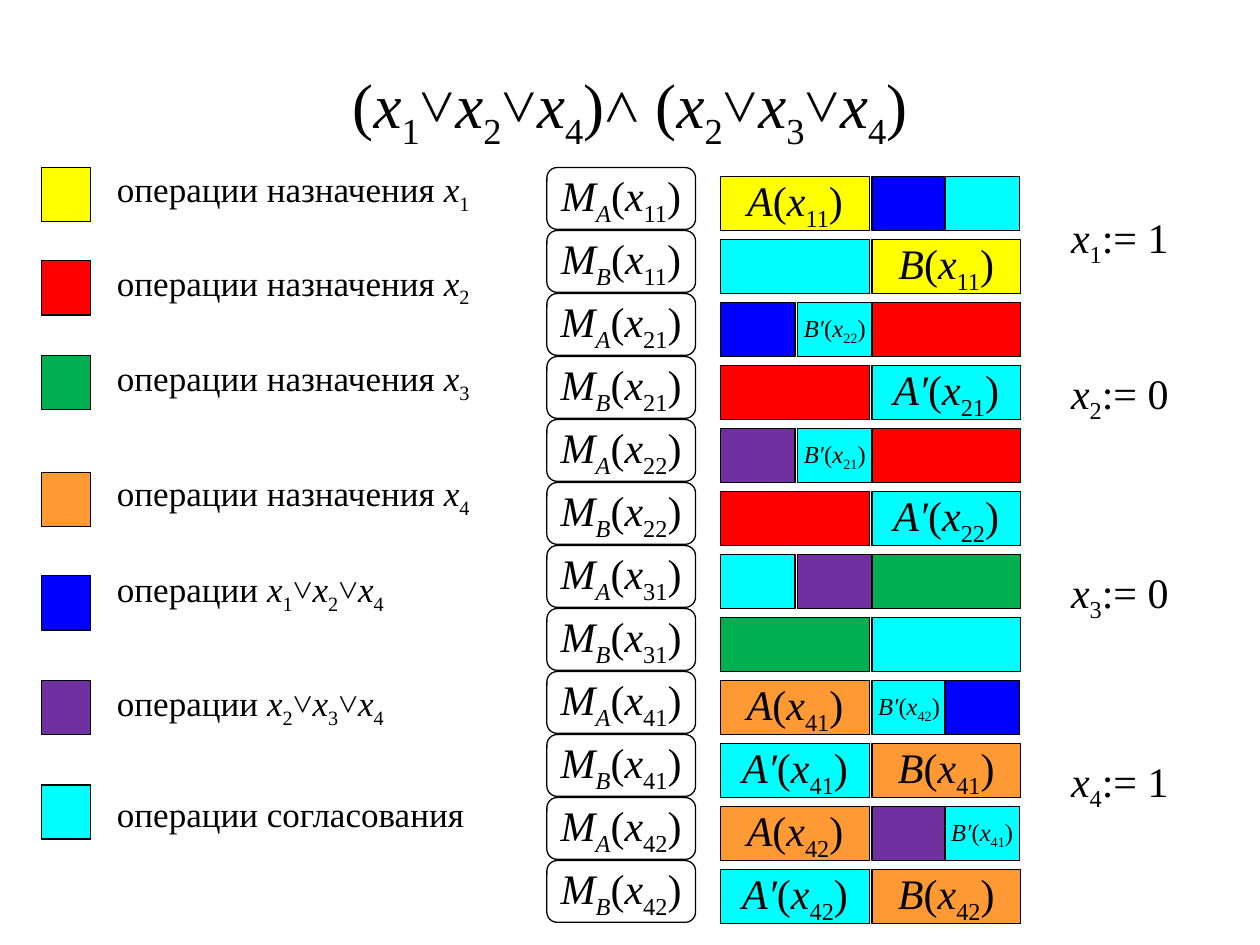
from itertools import groupby

from pptx import Presentation
from pptx.dml.color import RGBColor
from pptx.enum.shapes import MSO_SHAPE
from pptx.enum.text import MSO_ANCHOR, PP_ALIGN
from pptx.util import Inches, Pt

RECT, ROUNDED = MSO_SHAPE.RECTANGLE, MSO_SHAPE.ROUNDED_RECTANGLE
MIDDLE, BOTTOM = MSO_ANCHOR.MIDDLE, MSO_ANCHOR.BOTTOM
CENTER, LEFT = PP_ALIGN.CENTER, PP_ALIGN.LEFT

FONT = "Times New Roman"
COLORS = {
    "black": "000000", "yellow": "FFFF00", "red": "FF0000", "green": "00B050",
    "orange": "FF9933", "blue": "0000FF", "purple": "7030A0", "cyan": "00FFFF",
}

# In formulas "_" starts a subscript, which lasts to the next sign or space.
TITLE = "(x_1˅x_2˅x_4)˄ (x_2˅x_3˅x_4)"

# colour, label, swatch top, label top, label height
LEGEND = [
    ("yellow", "операции назначения x_1", 1.33, 1.25, 0.51),
    ("red", "операции назначения x_2", 2.07, 1.99, 0.51),
    ("green", "операции назначения x_3", 2.82, 2.75, 0.51),
    ("orange", "операции назначения x_4", 3.75, 3.66, 0.51),
    ("blue", "операции x_1˅x_2˅x_4", 4.57, 4.49, 0.44),
    ("purple", "операции x_2˅x_3˅x_4", 5.4, 5.4, 0.44),
    ("cyan", "операции согласования", 6.23, 6.16, 0.51),
]

# machine, then its operations: colour, length in half slots, label
SCHEDULE = [
    ("M_A(x_11)", [("yellow", 2, "A(x_11)"), ("blue", 1, ""), ("cyan", 1, "")]),
    ("M_B(x_11)", [("cyan", 2, ""), ("yellow", 2, "B(x_11)")]),
    ("M_A(x_21)", [("blue", 1, ""), ("cyan", 1, "B′(x_22)"), ("red", 2, "")]),
    ("M_B(x_21)", [("red", 2, ""), ("cyan", 2, "A′(x_21)")]),
    ("M_A(x_22)", [("purple", 1, ""), ("cyan", 1, "B′(x_21)"), ("red", 2, "")]),
    ("M_B(x_22)", [("red", 2, ""), ("cyan", 2, "A′(x_22)")]),
    ("M_A(x_31)", [("cyan", 1, ""), ("purple", 1, ""), ("green", 2, "")]),
    ("M_B(x_31)", [("green", 2, ""), ("cyan", 2, "")]),
    ("M_A(x_41)", [("orange", 2, "A(x_41)"), ("cyan", 1, "B′(x_42)"), ("blue", 1, "")]),
    ("M_B(x_41)", [("cyan", 2, "A′(x_41)"), ("orange", 2, "B(x_41)")]),
    ("M_A(x_42)", [("orange", 2, "A(x_42)"), ("purple", 1, ""), ("cyan", 1, "B′(x_41)")]),
    ("M_B(x_42)", [("cyan", 2, "A′(x_42)"), ("orange", 2, "B(x_42)")]),
]

# result, top
ASSIGNMENTS = [("x_1:= 1", 1.67), ("x_2:= 0", 2.91), ("x_3:= 0", 4.49), ("x_4:= 1", 5.99)]

ROW_PITCH = 0.5
MACHINE_LEFT, MACHINE_TOP, MACHINE_HEIGHT = 4.34, 1.33, 0.49
SLOT_LEFTS = (5.72, 6.33, 6.92, 7.5)
SLOT_TOP, SLOT_WIDTH, BAR_HEIGHT = 1.4, 0.59, 0.43
SWATCH_LEFT, SWATCH_WIDTH = 0.33, 0.39
LABEL_LEFT, LABEL_WIDTH = 0.83, 3.12
RESULT_LEFT, RESULT_WIDTH, RESULT_HEIGHT = 8.33, 1.15, 0.51


def rgb(name):
    return RGBColor.from_string(COLORS[name])


def styled_chars(formula):
    """Yield each character with its (italic, subscript) style."""
    subscript = False
    for char in formula:
        if char == "_":
            subscript = True
            continue
        subscript = subscript and char.isalnum()
        italic = char == "′" or (char.isascii() and char.isalpha())
        yield char, (italic, subscript)


def write_formula(frame, formula, size, align, anchor=MIDDLE):
    frame.vertical_anchor = anchor
    paragraph = frame.paragraphs[0]
    paragraph.alignment = align
    for (italic, subscript), chars in groupby(styled_chars(formula), lambda item: item[1]):
        run = paragraph.add_run()
        run.text = "".join(char for char, _ in chars)
        run.font.name, run.font.size, run.font.italic = FONT, Pt(size), italic
        run.font.color.rgb = rgb("black")
        if subscript:
            run.font._element.set("baseline", "-25000")


def add_box(slide, kind, left, top, width, height, color=None, formula="", size=24):
    box = slide.shapes.add_shape(kind, *map(Inches, (left, top, width, height)))
    box.shadow.inherit = False
    box.line.color.rgb = rgb("black")
    box.line.width = Pt(0.75)
    if color:
        box.fill.solid()
        box.fill.fore_color.rgb = rgb(color)
    else:
        box.fill.background()
    box.text_frame.word_wrap = False
    if formula:
        write_formula(box.text_frame, formula, size, CENTER)


def add_label(slide, left, top, width, height, formula, size, indent=0.1):
    frame = slide.shapes.add_textbox(*map(Inches, (left, top, width, height))).text_frame
    frame.word_wrap = True
    frame.margin_left = Inches(indent)
    write_formula(frame, formula, size, LEFT, BOTTOM)


def main():
    deck = Presentation()
    deck.slide_width, deck.slide_height = Inches(10), Inches(7.5)
    slide = deck.slides.add_slide(deck.slide_layouts[5])

    title = slide.shapes.title
    title.left, title.top, title.width, title.height = map(Inches, (0.5, 0.3, 9, 1.12))
    write_formula(title.text_frame, TITLE, 36, CENTER)

    for row, (machine, operations) in enumerate(SCHEDULE):
        offset = row * ROW_PITCH
        add_box(slide, ROUNDED, MACHINE_LEFT, MACHINE_TOP + offset,
                2 * SLOT_WIDTH, MACHINE_HEIGHT, formula=machine)
        slot = 0
        for color, span, label in operations:
            add_box(slide, RECT, SLOT_LEFTS[slot], SLOT_TOP + offset, span * SLOT_WIDTH,
                    BAR_HEIGHT, color, label, 24 if span == 2 else 14)
            slot += span

    for color, label, swatch_top, label_top, label_height in LEGEND:
        add_box(slide, RECT, SWATCH_LEFT, swatch_top, SWATCH_WIDTH, BAR_HEIGHT, color)
        add_label(slide, LABEL_LEFT, label_top, LABEL_WIDTH, label_height, label, 20)

    for result, top in ASSIGNMENTS:
        add_label(slide, RESULT_LEFT, top, RESULT_WIDTH, RESULT_HEIGHT, result, 24, indent=0.17)

    deck.save("out.pptx")


if __name__ == "__main__":
    main()
